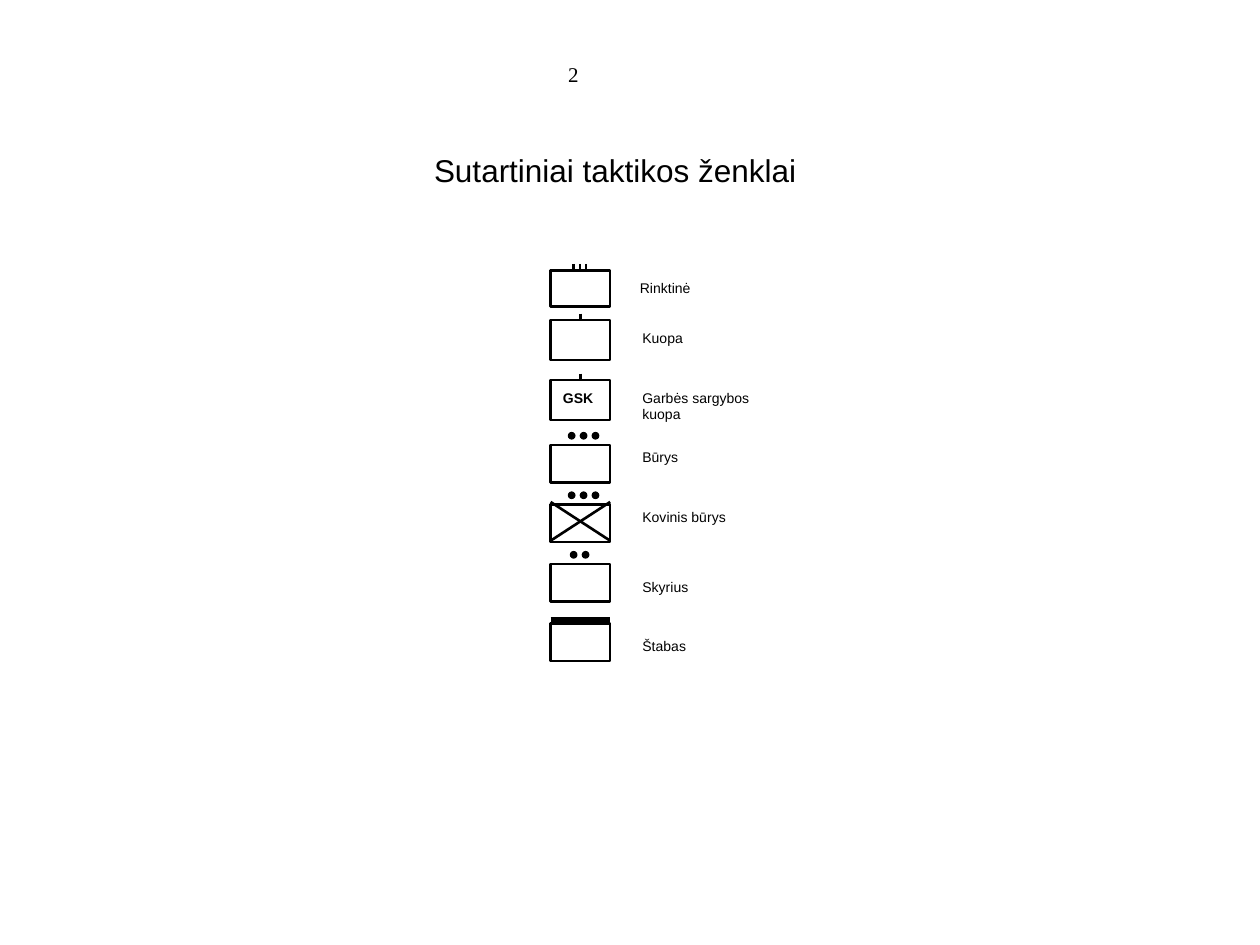
from lxml.etree import SubElement
from pptx import Presentation
from pptx.dml.color import RGBColor
from pptx.enum.shapes import MSO_CONNECTOR, MSO_SHAPE
from pptx.enum.text import PP_ALIGN
from pptx.oxml.ns import qn
from pptx.util import Cm, Pt

BLACK, WHITE = "000000", "FFFFFF"
TITLE = "Sutartiniai taktikos ženklai"
PAGE_NUMBER = "2"

# Label, label top, label width, box top, box height, mark kind, mark lefts (cm)
UNITS = [
    ("Rinktinė", 5.52, 1.65, 5.45, 0.73, "tick", (11.56, 11.69, 11.81)),
    ("Kuopa", 6.52, 1.45, 6.45, 0.81, "tick", (11.7,)),
    ("Garbės sargybos\nkuopa", 7.72, 2.85, 7.66, 0.81, "tick", (11.7,)),
    ("Būrys", 8.92, 1.35, 8.97, 0.76, "dot", (11.46, 11.7, 11.94)),
    ("Kovinis būrys", 10.13, 2.35, 10.17, 0.76, "dot", (11.46, 11.7, 11.94)),
    ("Skyrius", 11.53, 1.55, 11.37, 0.76, "dot", (11.5, 11.74)),
    ("Štabas", 12.73, 1.5, 12.57, 0.76, "bar", ()),
]
BOX_TEXTS = {2: "GSK"}
CROSSED = {4}
BOX_LEFT, BOX_WIDTH, LABEL_LEFT = 11.1, 1.2, 12.7
TICK_HEIGHT, DOT_SIZE, DOT_RISE = 0.13, 0.13, 0.25


def color(hex_value):
    return RGBColor.from_string(hex_value)


def add_text(text, left, top, width, height, size, font="Arial",
             bold=False, align=PP_ALIGN.LEFT):
    box = slide.shapes.add_textbox(Cm(left), Cm(top), Cm(width), Cm(height))
    box.text_frame.word_wrap = True
    box.text_frame.text = text
    for paragraph in box.text_frame.paragraphs:
        paragraph.alignment = align
        paragraph.font.size = Pt(size)
        paragraph.font.name = font
        paragraph.font.bold = bold
        paragraph.font.color.rgb = color(BLACK)


def add_shape(kind, left, top, width, height, fill, line_width):
    shape = slide.shapes.add_shape(kind, Cm(left), Cm(top), Cm(width), Cm(height))
    shape.shadow.inherit = False
    shape.fill.solid()
    shape.fill.fore_color.rgb = color(fill)
    shape.line.color.rgb = color(BLACK)
    shape.line.width = Pt(line_width)


def add_line(x1, y1, x2, y2, line_width=1.5):
    line = slide.shapes.add_connector(
        MSO_CONNECTOR.STRAIGHT, Cm(x1), Cm(y1), Cm(x2), Cm(y2))
    line.line.color.rgb = color(BLACK)
    line.line.width = Pt(line_width)
    SubElement(line._element.spPr, qn("a:effectLst"))


presentation = Presentation()
presentation.slide_width, presentation.slide_height = Cm(25.4), Cm(19.05)
slide = presentation.slides.add_slide(presentation.slide_layouts[6])

# Heading and page number
add_text(TITLE, 8.5, 2.92, 8, 1.02, 18)
add_text(PAGE_NUMBER, 11.18, 1.12, 0.76, 0.76, 12, font="Times New Roman",
         align=PP_ALIGN.CENTER)

# Unit symbols with their labels
box_right = BOX_LEFT + BOX_WIDTH
for index, (label, label_top, label_width, top, height, mark, lefts) in enumerate(UNITS):
    add_shape(MSO_SHAPE.RECTANGLE, BOX_LEFT, top, BOX_WIDTH, height, WHITE, 1.5)

    # Size mark above the box
    for left in lefts:
        if mark == "tick":
            add_line(left, top - TICK_HEIGHT, left, top)
        else:
            add_shape(MSO_SHAPE.OVAL, left, top - DOT_RISE, DOT_SIZE, DOT_SIZE,
                      BLACK, 0.75)
    if mark == "bar":
        add_line(BOX_LEFT, top - 0.05, box_right, top - 0.05, 4.5)

    # Contents of the box
    if index in CROSSED:
        cross_top, cross_bottom = top - 0.05, top + height - 0.03
        add_line(BOX_LEFT, cross_top, box_right, cross_bottom)
        add_line(BOX_LEFT, cross_bottom, box_right, cross_top)
    if index in BOX_TEXTS:
        add_text(BOX_TEXTS[index], BOX_LEFT, label_top, BOX_WIDTH, 0.58, 8, bold=True)

    label_height = 0.58 + 0.36 * label.count("\n")
    label_left = LABEL_LEFT if index else LABEL_LEFT - 0.05
    add_text(label, label_left, label_top, label_width, label_height, 8)

presentation.save("out.pptx")
